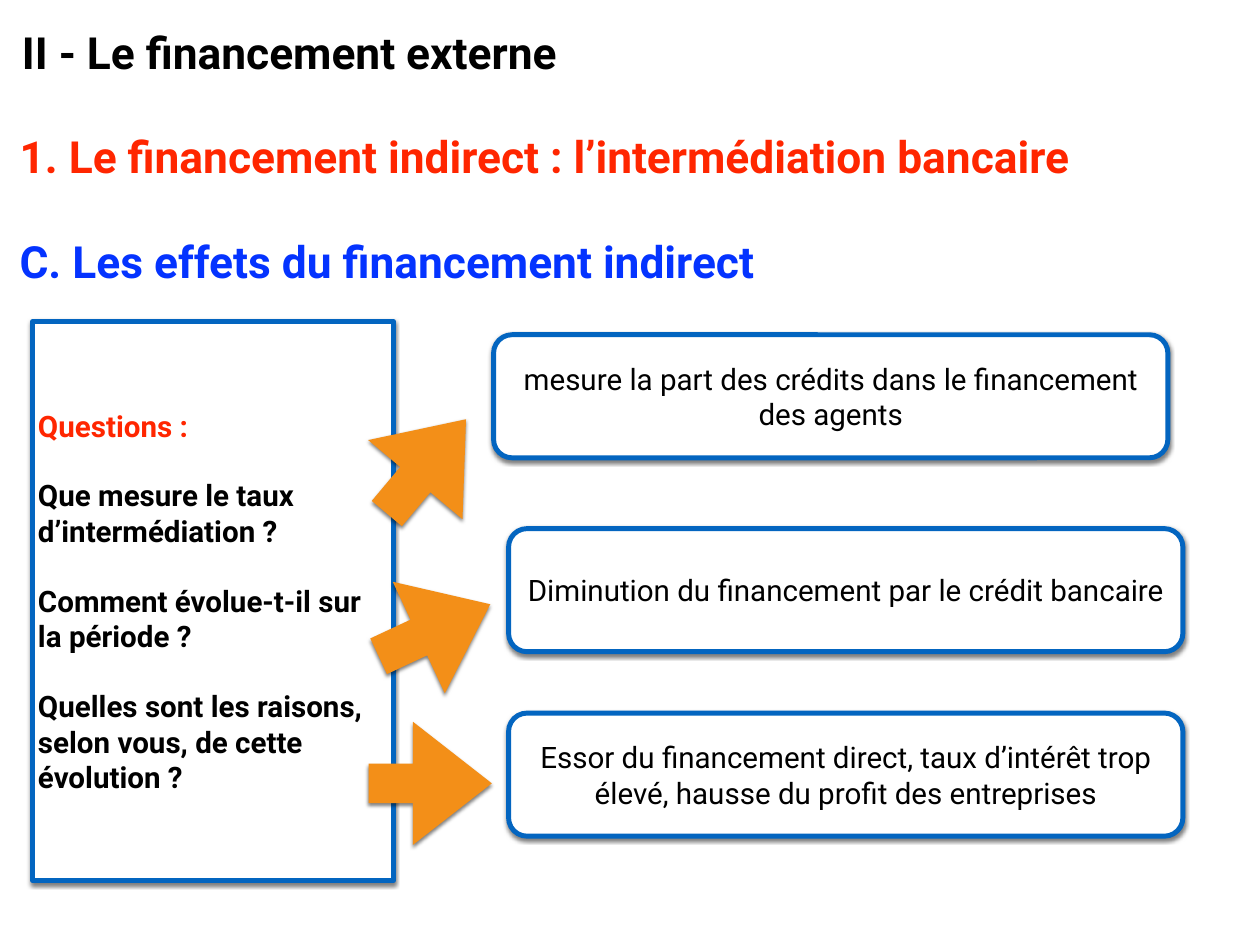
"""Build the slide on the effects of indirect financing."""
import pptx
import pptx.dml.color
import pptx.enum.shapes
import pptx.enum.text
import pptx.oxml
import pptx.oxml.ns
import pptx.util

Cm = pptx.util.Cm
Pt = pptx.util.Pt
RGBColor = pptx.dml.color.RGBColor
KIND = pptx.enum.shapes.MSO_SHAPE
ALIGN = pptx.enum.text.PP_ALIGN
FIT = pptx.enum.text.MSO_AUTO_SIZE

BLACK = RGBColor(0x00, 0x00, 0x00)
WHITE = RGBColor(0xFF, 0xFF, 0xFF)
RED = RGBColor(0xFF, 0x26, 0x00)
BLUE = RGBColor(0x04, 0x33, 0xFF)
EDGE = RGBColor(0x03, 0x65, 0xC0)
ORANGE = RGBColor(0xF3, 0x8F, 0x18)

FONT = "Roboto"
INSET = Cm(0.15)
ROW = 3.53
HEADS = [
    ("II - Le financement externe", 0.48, 16.33, BLACK, False),
    ("1. Le financement indirect : l’intermédiation bancaire", 0.41, 33.2, RED, True),
    ("C. Les effets du financement indirect", 0.41, 22.56, BLUE, False),
]
ASKS = [
    "Questions :",
    "Que mesure le taux d’intermédiation ?",
    "Comment évolue-t-il sur la période ?",
    "Quelles sont les raisons, selon vous, de cette évolution ?",
]
REPLIES = [
    ("mesure la part des crédits dans le financement des agents", 14.15, 9.6),
    ("Diminution du financement par le crédit bancaire", 14.58, 15.16),
    ("Essor du financement direct, taux d’intérêt trop élevé, "
     "hausse du profit des entreprises", 14.58, 20.45),
]
ARROWS = [(10.46, 11.61, 310), (10.69, 16.31, 335), (10.57, 20.7, 0)]
SHADOW = (
    '<a:outerShdw %s blurRad="38100" dist="25400" dir="5400000" rotWithShape="0">'
    '<a:srgbClr val="000000"><a:alpha val="50000"/></a:srgbClr></a:outerShdw>'
    % pptx.oxml.ns.nsdecls("a")
)


def write(shape, lines, size, color, bold, align):
    frame = shape.text_frame
    frame.text = "\n".join(lines)
    frame.word_wrap = True
    frame.vertical_anchor = pptx.enum.text.MSO_ANCHOR.MIDDLE
    frame.margin_left = frame.margin_right = INSET
    frame.margin_top = frame.margin_bottom = INSET
    for para in frame.paragraphs:
        para.alignment = align
        for run in para.runs:
            font = run.font
            font.name, font.size, font.bold = FONT, Pt(size), bold
            font.color.rgb = color
    return frame


def draw(slide, kind, box, fill, edge=None):
    shape = slide.shapes.add_shape(kind, *map(Cm, box))
    shape.fill.solid()
    shape.fill.fore_color.rgb = fill
    if edge is None:
        shape.line.fill.background()
    else:
        shape.line.color.rgb = edge
        shape.line.width = Pt(4)
    shape.shadow.inherit = False
    effects = shape.element.spPr.find(pptx.oxml.ns.qn("a:effectLst"))
    effects.append(pptx.oxml.parse_xml(SHADOW))
    return shape


def main():
    deck = pptx.Presentation()
    deck.slide_width, deck.slide_height = Cm(36.12), Cm(27.1)
    slide = deck.slides.add_slide(deck.slide_layouts[6])

    for i, (text, left, width, color, wrap) in enumerate(HEADS):
        box = slide.shapes.add_textbox(Cm(left), Cm(0.58 + 3 * i), Cm(width), Cm(1.8))
        frame = write(box, [text], 36, color, True, ALIGN.LEFT)
        frame.word_wrap = wrap
        frame.auto_size = FIT.SHAPE_TO_FIT_TEXT

    panel = draw(slide, KIND.RECTANGLE, (0.94, 9.22, 10.34, 16.03), WHITE, EDGE)
    frame = write(panel, ASKS, 24, BLACK, True, ALIGN.LEFT)
    frame.paragraphs[0].runs[0].font.color.rgb = RED
    for para in frame.paragraphs[1:]:
        para.space_before = Pt(28)

    for (left, top, turn), (text, x, y) in zip(ARROWS, REPLIES):
        arrow = draw(slide, KIND.RIGHT_ARROW, (left, top, ROW, ROW), ORANGE)
        arrow.adjustments[0], arrow.adjustments[1] = 0.32, 0.64
        arrow.rotation = turn
        card = draw(slide, KIND.ROUNDED_RECTANGLE, (x, y, 19.33, ROW), WHITE, EDGE)
        card.adjustments[0] = 0.15
        write(card, [text], 24, BLACK, False, ALIGN.CENTER)

    deck.save("out.pptx")


if __name__ == "__main__":
    main()
